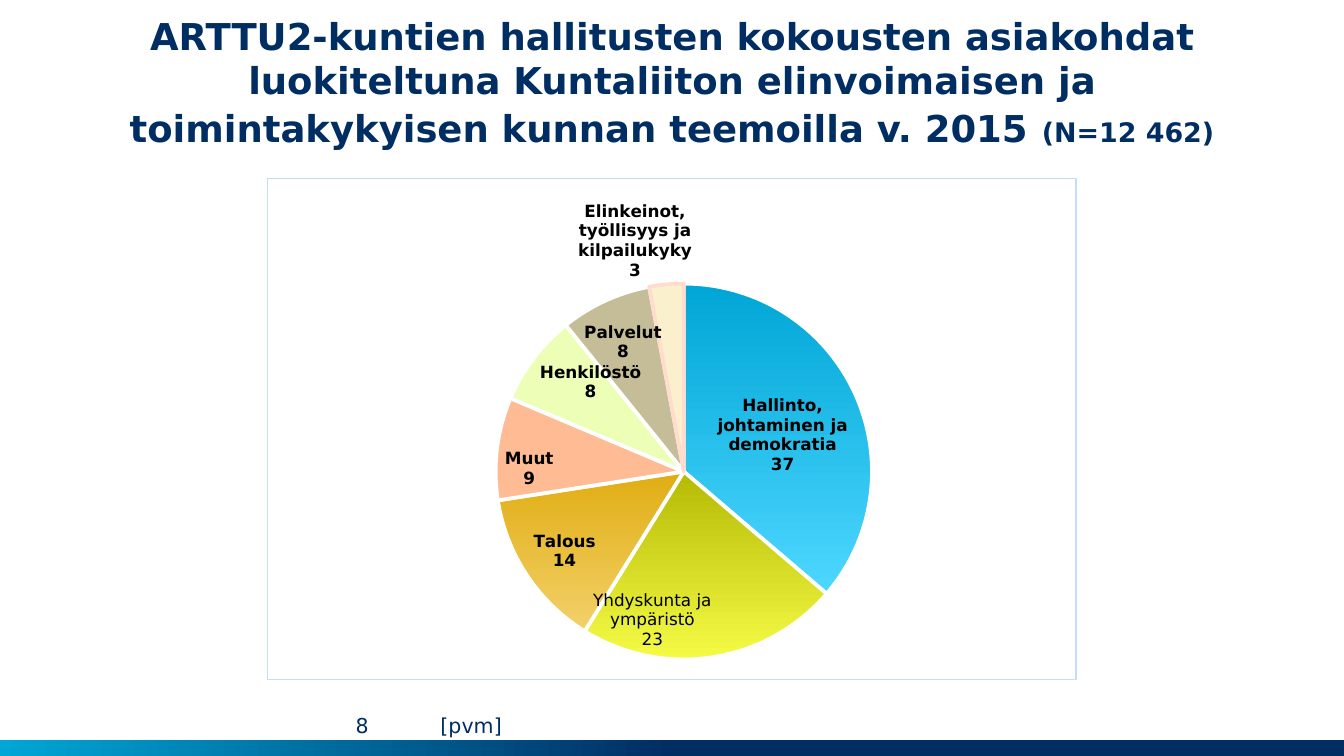
"""Build a slide with a pie chart of municipal board agenda items by theme."""
import dataclasses

import pptx
import pptx.chart.data
import pptx.dml.color
import pptx.enum.chart
import pptx.enum.shapes
import pptx.enum.text
import pptx.oxml
import pptx.oxml.ns
import pptx.util

Cm = pptx.util.Cm
Pt = pptx.util.Pt
qn = pptx.oxml.ns.qn
NS = pptx.oxml.ns.nsdecls("c", "a")


@dataclasses.dataclass(frozen=True)
class Theme:
    font: str = "DejaVu Sans"
    navy: str = "002E63"
    cyan: str = "00A6D6"
    black: str = "000000"
    white: str = "FFFFFF"
    frame: str = "C1DEFF"
    accent_edge: str = "FFDCCD"
    title: float = 19.8
    title_gap: float = 21.6
    title_note: float = 14.4
    footer: float = 11
    chart: float = 10
    label: float = 9


@dataclasses.dataclass(frozen=True)
class Slice:
    name: str
    value: int
    colors: tuple
    bold: bool = True
    offset: tuple = ()
    edge: str = Theme.white


SLICES = [
    Slice("Hallinto, johtaminen ja demokratia", 37, ("00A6D6", "4DD7FF")),
    Slice("Yhdyskunta ja ympäristö", 23, ("B5BA05", "F5FA45"), bold=False),
    Slice("Talous", 14, ("E0AD12", "F3D16A")),
    Slice("Muut", 9, ("FFBB94",)),
    Slice("Henkilöstö", 8, ("EDFFB6",)),
    Slice("Palvelut", 8, ("C4BD97",), offset=(-0.03, 0.03)),
    Slice("Elinkeinot, työllisyys ja kilpailukyky", 3, ("FBF0CD",),
          offset=(-0.11, -0.18), edge=Theme.accent_edge),
]


def rgb(color):
    return pptx.dml.color.RGBColor.from_string(color)


def layout(**values):
    tags = "".join(f'<c:{tag} val="{value}"/>' for tag, value in values.items())
    return pptx.oxml.parse_xml(
        f"<c:layout {NS}><c:manualLayout>{tags}</c:manualLayout></c:layout>")


class SlideBuilder:
    def __init__(self, slide, theme):
        self.slide = slide
        self.theme = theme

    def style(self, font, size, color, bold=False):
        font.name = self.theme.font
        font.size = Pt(size)
        font.bold = bold
        font.color.rgb = rgb(color)

    def gradient(self, fill, colors, angle, positions=(0, 1)):
        fill.gradient()
        fill.gradient_angle = angle
        for stop, color, position in zip(fill.gradient_stops, colors, positions):
            stop.color.rgb = rgb(color)
            stop.position = position

    def bar(self, box):
        sp = self.slide.shapes.add_shape(
            pptx.enum.shapes.MSO_SHAPE.RECTANGLE, *map(Cm, box))
        sp.shadow.inherit = False
        sp.line.fill.background()
        self.gradient(sp.fill, (self.theme.navy, self.theme.cyan), 180, (0.5, 1))

    def text(self, box, runs, anchor, bold=False, inset=0):
        sp = self.slide.shapes.add_textbox(*map(Cm, box))
        tf = sp.text_frame
        tf.word_wrap = True
        tf.vertical_anchor = anchor
        tf.margin_left = tf.margin_right = 0
        tf.margin_top = tf.margin_bottom = Cm(inset)
        p = tf.paragraphs[0]
        p.alignment = pptx.enum.text.PP_ALIGN.CENTER
        for text, size in runs:
            r = p.add_run()
            r.text = text
            self.style(r.font, size, self.theme.navy, bold)

    def pie(self, box, slices):
        data = pptx.chart.data.CategoryChartData(number_format="0")
        data.categories = [item.name for item in slices]
        data.add_series("Series 1", [item.value for item in slices])
        chart = self.slide.shapes.add_chart(
            pptx.enum.chart.XL_CHART_TYPE.PIE, *map(Cm, box), data).chart
        chart.has_title = False
        chart.has_legend = False
        self.style(chart.font, self.theme.chart, self.theme.navy)
        self.frame(chart)
        plot = chart.plots[0]
        plot.vary_by_categories = True
        for i, item in enumerate(slices):
            self.slice(plot.series[0].points[i], item)
        for dlbl in chart.element.iter(qn("c:dLbl")):
            self.label_layout(dlbl, slices)

    def frame(self, chart):
        root = chart.element
        root.find(qn("c:txPr")).addprevious(pptx.oxml.parse_xml(
            f'<c:spPr {NS}><a:solidFill><a:srgbClr val="{self.theme.white}"/></a:solidFill>'
            f'<a:ln w="{Pt(0.75)}"><a:solidFill><a:srgbClr val="{self.theme.frame}"/>'
            "</a:solidFill></a:ln></c:spPr>"))
        area = next(root.iter(qn("c:plotArea")))
        for old in area.findall(qn("c:layout")):
            area.remove(old)
        area.insert(0, layout(layoutTarget="inner", xMode="edge", yMode="edge",
                              x=0.28, y=0.21, w=0.47, h=0.75))

    def slice(self, point, item):
        fill = point.format.fill
        if len(item.colors) > 1:
            self.gradient(fill, item.colors, 270)
        else:
            fill.solid()
            fill.fore_color.rgb = rgb(item.colors[0])
        point.format.line.color.rgb = rgb(item.edge)
        point.format.line.width = Pt(2)
        label = point.data_label
        self.style(label.font, self.theme.label, self.theme.black, item.bold)
        label.position = pptx.enum.chart.XL_LABEL_POSITION.INSIDE_END

    def label_layout(self, dlbl, slices):
        for tag, shown in (("LegendKey", 0), ("Val", 1), ("CatName", 1),
                           ("SerName", 0), ("Percent", 0)):
            dlbl.find(qn(f"c:show{tag}")).set("val", str(shown))
        dlbl.append(pptx.oxml.parse_xml(f"<c:separator {NS}>\n</c:separator>"))
        idx = dlbl.find(qn("c:idx"))
        offset = slices[int(idx.get("val"))].offset
        if offset:
            idx.addnext(layout(x=offset[0], y=offset[1]))


def main():
    theme = Theme()
    anchors = pptx.enum.text.MSO_ANCHOR
    prs = pptx.Presentation()
    prs.slide_width = Cm(25.4)
    prs.slide_height = Cm(14.29)
    s = SlideBuilder(prs.slides.add_slide(prs.slide_layouts[6]), theme)
    s.bar((0, 13.99, 25.4, 0.3))
    s.text((1.89, 0.58, 21.62, 2.4), [
        ("ARTTU2-kuntien hallitusten kokousten asiakohdat luokiteltuna Kuntaliiton "
         "elinvoimaisen ja toimintakykyisen kunnan teemoilla v. 2015", theme.title),
        (" ", theme.title_gap),
        ("(N=12 462)", theme.title_note),
    ], anchors.BOTTOM, bold=True, inset=0.13)
    s.text((7.65, 13.44, 2.51, 0.56), [("[pvm]", theme.footer)], anchors.MIDDLE)
    s.text((6.3, 13.44, 1.09, 0.56), [("8", theme.footer)], anchors.MIDDLE)
    s.pie((5.04, 3.36, 15.31, 9.5), SLICES)
    prs.save("out.pptx")


if __name__ == "__main__":
    main()
